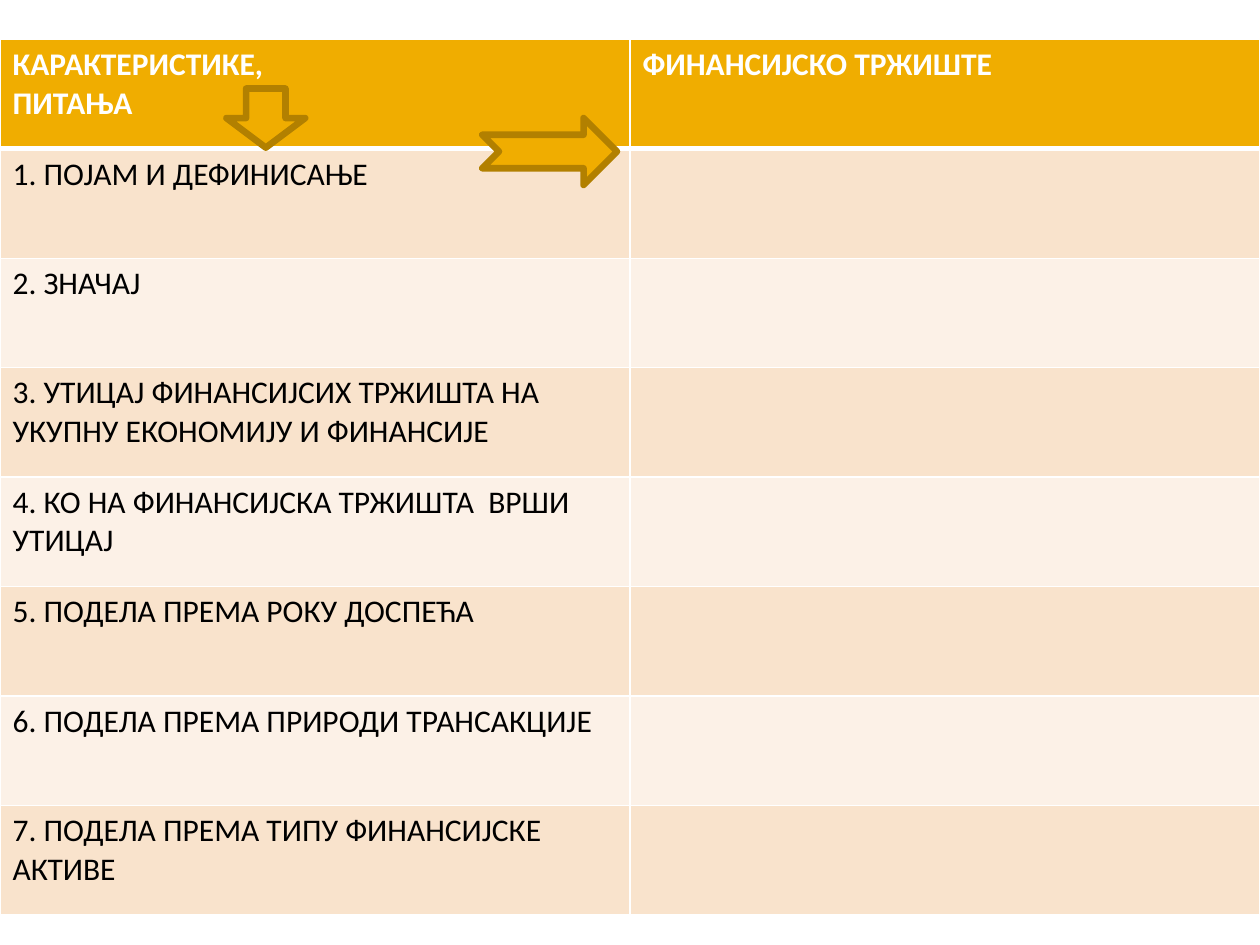
from pptx import Presentation
from pptx.dml.color import RGBColor
from pptx.enum.shapes import MSO_SHAPE
from pptx.oxml import parse_xml
from pptx.oxml.ns import nsdecls
from pptx.util import Pt

WHITE = RGBColor(0xFF, 0xFF, 0xFF)
BLACK = RGBColor(0x00, 0x00, 0x00)
AMBER = RGBColor(0xF0, 0xAD, 0x00)
DARK_AMBER = RGBColor(0xB2, 0x80, 0x00)
PEACH = RGBColor(0xF9, 0xE3, 0xCC)
CREAM = RGBColor(0xFC, 0xF1, 0xE7)

HEADERS = ["КАРАКТЕРИСТИКЕ,\nПИТАЊА", "ФИНАНСИЈСКО ТРЖИШТЕ"]
QUESTIONS = [
    "1. ПОЈАМ И ДЕФИНИСАЊЕ",
    "2. ЗНАЧАЈ",
    "3. УТИЦАЈ ФИНАНСИЈСИХ ТРЖИШТА НА УКУПНУ ЕКОНОМИЈУ И ФИНАНСИЈЕ",
    "4. КО НА ФИНАНСИЈСКА ТРЖИШТА  ВРШИ УТИЦАЈ",
    "5. ПОДЕЛА ПРЕМА РОКУ ДОСПЕЋА",
    "6. ПОДЕЛА ПРЕМА ПРИРОДИ ТРАНСАКЦИЈЕ",
    "7. ПОДЕЛА ПРЕМА ТИПУ ФИНАНСИЈСКЕ АКТИВЕ",
]
ROW_HEIGHT = Pt(62.55)


def write_text(text_frame, text, *, color, bold=False, size=18, font="Calibri"):
    text_frame.text = text
    for paragraph in text_frame.paragraphs:
        paragraph.font.size = Pt(size)
        for run in paragraph.runs:
            run.font.name = font
            run.font.size = Pt(size)
            run.font.bold = bold
            run.font.color.rgb = color


def set_borders(cell, **widths):
    """Give the cell white borders; widths are points keyed by lnL, lnR, lnT, lnB."""
    properties = cell._tc.get_or_add_tcPr()
    for side, width in widths.items():
        properties.append(parse_xml(
            f'<a:{side} {nsdecls("a")} w="{Pt(width)}"><a:solidFill>'
            f'<a:srgbClr val="{WHITE}"/></a:solidFill></a:{side}>'))


presentation = Presentation()
presentation.slide_width = Pt(720)
presentation.slide_height = Pt(540)
slide = presentation.slides.add_slide(presentation.slide_layouts[6])

rows = [HEADERS] + [[question, ""] for question in QUESTIONS]
table = slide.shapes.add_table(
    len(rows), len(HEADERS), Pt(0), Pt(22.5), Pt(720), ROW_HEIGHT * len(rows)).table

for row_index, texts in enumerate(rows):
    table.rows[row_index].height = ROW_HEIGHT
    is_header = row_index == 0
    if is_header:
        fill_color = AMBER
    else:
        fill_color = PEACH if row_index % 2 else CREAM
    for column_index, text in enumerate(texts):
        cell = table.cell(row_index, column_index)
        set_borders(cell, lnL=1, lnR=1, lnT=3 if row_index == 1 else 1,
                    lnB=3 if is_header else 1)
        cell.fill.solid()
        cell.fill.fore_color.rgb = fill_color
        write_text(cell.text_frame, text, color=WHITE if is_header else BLACK,
                   bold=is_header)

arrows = [
    (MSO_SHAPE.DOWN_ARROW, 129.4, 50.6, 45, 33.8),
    (MSO_SHAPE.NOTCHED_RIGHT_ARROW, 275.6, 67.5, 77, 38.2),
]
for arrow_type, left, top, width, height in arrows:
    arrow = slide.shapes.add_shape(arrow_type, Pt(left), Pt(top), Pt(width), Pt(height))
    arrow.shadow.inherit = False
    arrow.fill.solid()
    arrow.fill.fore_color.rgb = AMBER
    arrow.line.color.rgb = DARK_AMBER
    arrow.line.width = Pt(3.78)

presentation.save("out.pptx")
